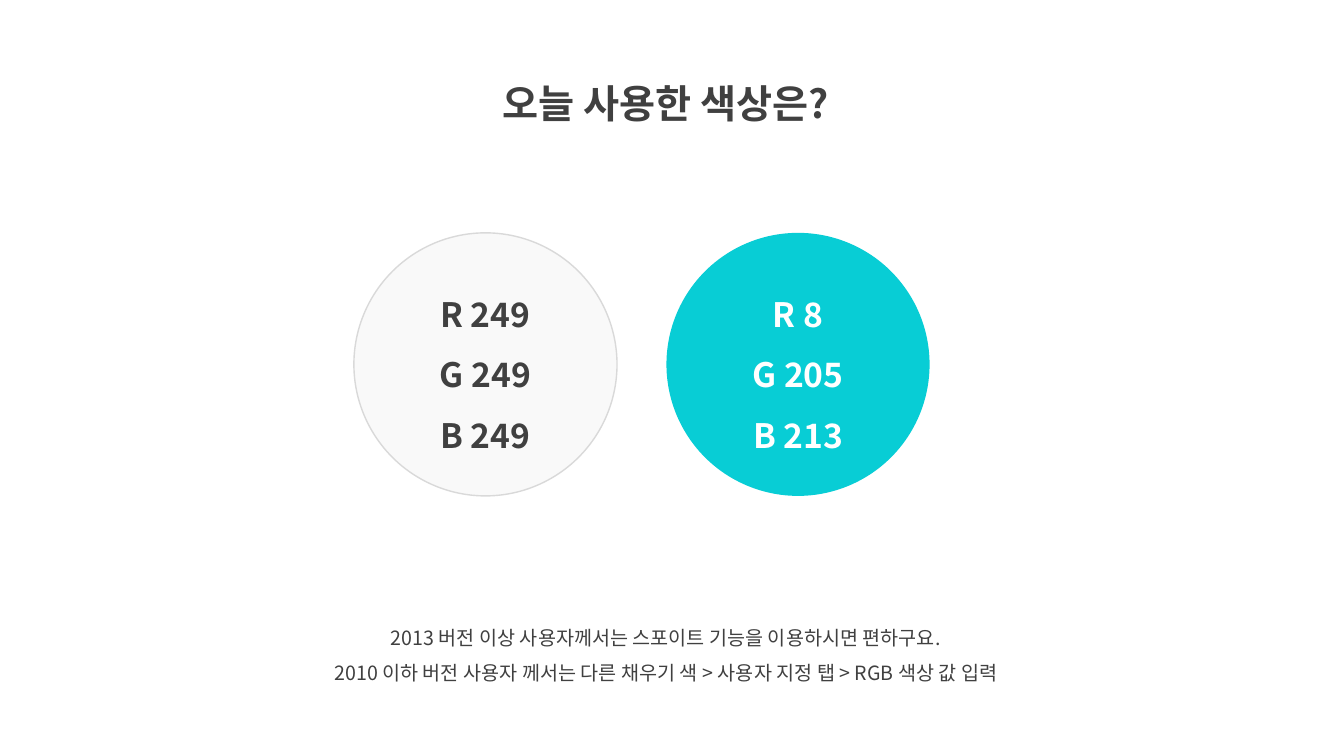
"""Builds a slide that shows the two colours used, with their RGB values."""
import pptx
import pptx.dml.color
import pptx.enum.shapes
import pptx.enum.text
import pptx.oxml.ns
import pptx.util
from lxml import etree
from pptx.util import Inches

TITLE = "오늘 사용한 색상은?"
NOTES = [
    "2013 버전 이상 사용자께서는 스포이트 기능을 이용하시면 편하구요.",
    "2010 이하 버전 사용자 께서는 다른 채우기 색 > 사용자 지정 탭 > RGB 색상 값 입력",
]
SWATCHES = [
    {"rgb": (249, 249, 249), "ink": "dark", "outline": "outline"},
    {"rgb": (8, 205, 213), "ink": "light", "outline": None},
]
THEME = {
    "font": "Noto Sans CJK KR",
    "colors": {"dark": "404040", "light": "FFFFFF", "outline": "D9D9D9"},
    "sizes": {"title": 28, "swatch": 24, "notes": 14},
    "line_spacing": 1.5,
}
CIRCLE_LEFT, CIRCLE_TOP, CIRCLE_SIZE, CIRCLE_PITCH = 3.51, 2.31, 2.61, 3.1


def theme_color(name):
    return pptx.dml.color.RGBColor.from_string(THEME["colors"][name])


def write_lines(shape, lines, size, ink, bold):
    frame = shape.text_frame
    frame.word_wrap = True
    frame.text = "\n".join(lines)
    for para in frame.paragraphs:
        para.alignment = pptx.enum.text.PP_ALIGN.CENTER
        para.line_spacing = THEME["line_spacing"]
        for span in para.runs:
            span.font.name = THEME["font"]
            span.font.size = pptx.util.Pt(THEME["sizes"][size])
            span.font.bold = bold
            span.font.color.rgb = theme_color(ink)
            east_asian = etree.Element(pptx.oxml.ns.qn("a:ea"), typeface=THEME["font"])
            span.font._element.find(pptx.oxml.ns.qn("a:latin")).addnext(east_asian)


def add_text(page, area, lines, size, bold):
    box = page.shapes.add_textbox(*map(Inches, area))
    write_lines(box, lines, size, "dark", bold)
    box.text_frame.auto_size = pptx.enum.text.MSO_AUTO_SIZE.SHAPE_TO_FIT_TEXT


def add_swatch(page, index, swatch):
    area = (CIRCLE_LEFT + index * CIRCLE_PITCH, CIRCLE_TOP, CIRCLE_SIZE, CIRCLE_SIZE)
    circle = page.shapes.add_shape(
        pptx.enum.shapes.MSO_SHAPE.OVAL, *map(Inches, area))
    circle.shadow.inherit = False
    circle.fill.solid()
    circle.fill.fore_color.rgb = pptx.dml.color.RGBColor(*swatch["rgb"])
    if swatch["outline"]:
        circle.line.color.rgb = theme_color(swatch["outline"])
        circle.line.width = pptx.util.Pt(1)
    else:
        circle.line.fill.background()
    lines = [f"{channel} {value}" for channel, value in zip("RGB", swatch["rgb"])]
    write_lines(circle, lines, "swatch", swatch["ink"], True)
    circle.text_frame.vertical_anchor = pptx.enum.text.MSO_ANCHOR.MIDDLE


def main():
    deck = pptx.Presentation()
    deck.slide_width, deck.slide_height = Inches(13.33), Inches(7.5)
    page = deck.slides.add_slide(deck.slide_layouts[6])
    add_text(page, (4.29, 0.5, 4.63, 0.72), [TITLE], "title", True)
    add_text(page, (2.61, 6.04, 7.99, 0.81), NOTES, "notes", False)
    for index, swatch in enumerate(SWATCHES):
        add_swatch(page, index, swatch)
    deck.save("out.pptx")


if __name__ == "__main__":
    main()
